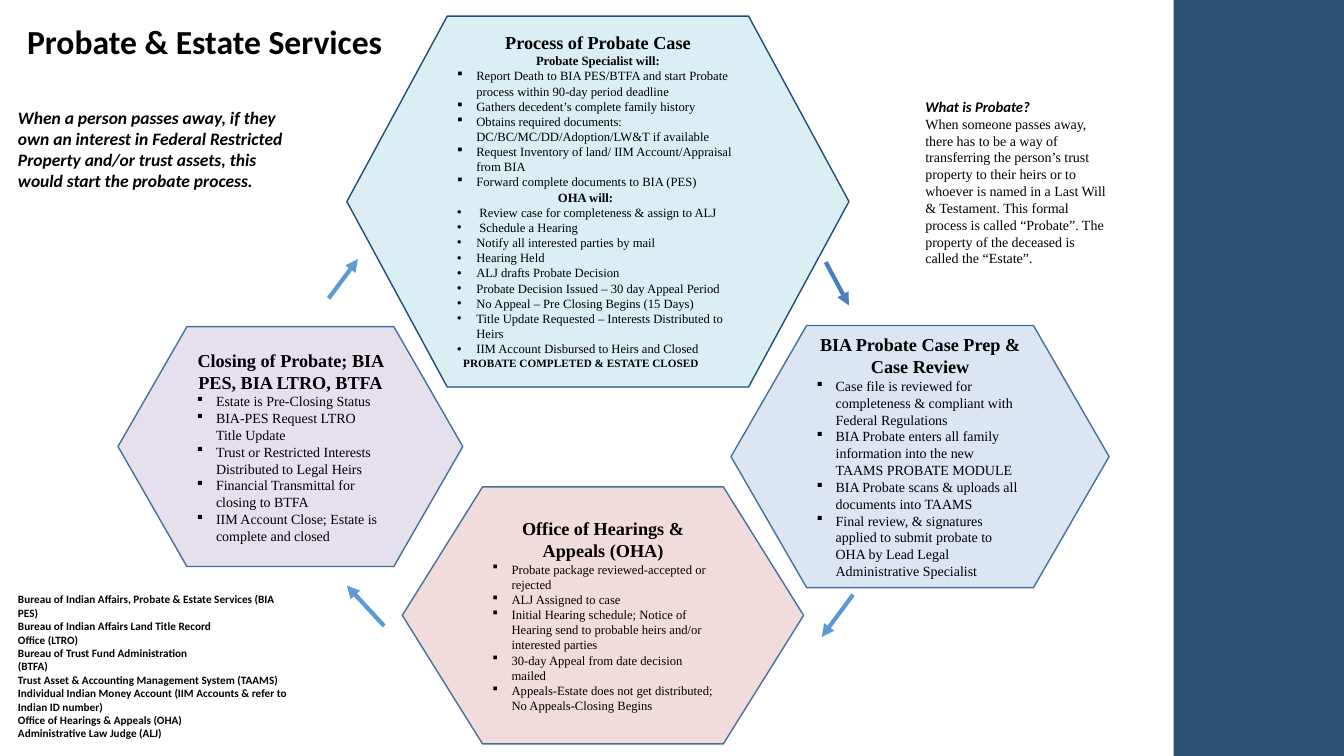
import pptx
import pptx.dml.color
import pptx.enum.shapes
import pptx.enum.text
import pptx.oxml.ns
import pptx.util
from lxml import etree

Inches, Pt = pptx.util.Inches, pptx.util.Pt
SHAPES = pptx.enum.shapes.MSO_SHAPE
ANCHOR = pptx.enum.text.MSO_ANCHOR
ALIGN = pptx.enum.text.PP_ALIGN
qn = pptx.oxml.ns.qn
rgb = pptx.dml.color.RGBColor.from_string
SERIF, SANS = "Times New Roman", "Calibri"
SQUARE, DOT = ("Wingdings", "§"), ("Arial", "•")

deck = pptx.Presentation()
deck.slide_width, deck.slide_height = Inches(13.33), Inches(7.5)
slide = deck.slides.add_slide(deck.slide_layouts[6])
shapes = slide.shapes


def write(frame, text, size, font=SERIF, bold=False, italic=False,
          align=ALIGN.LEFT, bullet=None, indent=0):
    """Append one paragraph, filling the empty first one if it is still free."""
    paragraph = frame.paragraphs[0]
    if paragraph.runs:
        paragraph = frame.add_paragraph()
    paragraph.alignment = align
    props = paragraph._p.get_or_add_pPr()
    if indent:
        props.set("marL", str(Inches(indent)))
    if bullet:
        bullet_font, mark = bullet
        props.set("indent", str(-Inches(indent)))
        etree.SubElement(props, qn("a:buFont")).set("typeface", bullet_font)
        etree.SubElement(props, qn("a:buChar")).set("char", mark)
    run = paragraph.add_run()
    run.text = text
    run.font.name, run.font.size = font, Pt(size)
    run.font.bold, run.font.italic = bold, italic
    run.font.color.rgb = rgb("000000")


# Side band
band = shapes.add_shape(SHAPES.RECTANGLE, Inches(11.64), 0, Inches(1.69), Inches(7.5))
band.shadow.inherit = False
band.fill.solid()
band.fill.fore_color.rgb = rgb("2C4F76")
band.line.fill.background()

# Title
title = shapes.add_textbox(Inches(0.17), Inches(0.16), Inches(3.76), Inches(0.5))
title.text_frame.word_wrap = False
write(title.text_frame, "Probate & Estate Services", 24, SANS, bold=True)

# Stages of the cycle: place, fill, outline, heading, bullet size, bullets
stages = [
    ((3.44, 0.16, 4.98, 3.68), "DBEEF4", "1F4D78", "Process of Probate Case", 9, []),
    ((7.25, 3.23, 3.75, 2.6), "DCE6F2", "41719C", "BIA Probate Case Prep & Case Review", 10, [
        "Case file is reviewed for completeness & compliant with Federal Regulations",
        "BIA Probate enters all family information into the new TAAMS PROBATE MODULE",
        "BIA Probate scans & uploads all documents into TAAMS",
        "Final review, & signatures applied to submit probate to OHA by Lead Legal "
        "Administrative Specialist"]),
    ((3.99, 4.83, 3.98, 2.55), "F2DCDB", "41719C", "Office of Hearings & Appeals (OHA)", 9, [
        "Probate package reviewed-accepted or rejected",
        "ALJ Assigned to case",
        "Initial Hearing schedule; Notice of Hearing send to probable heirs and/or "
        "interested parties",
        "30-day Appeal from date decision mailed",
        "Appeals-Estate does not get distributed; No Appeals-Closing Begins"]),
    ((1.17, 3.24, 3.42, 2.38), "E6E0EC", "41719C", "Closing of Probate; BIA PES, BIA LTRO, BTFA", 10, [
        "Estate is Pre-Closing Status",
        "BIA-PES Request LTRO Title Update",
        "Trust or Restricted Interests Distributed to Legal Heirs",
        "Financial Transmittal for closing to BTFA",
        "IIM Account Close; Estate is complete and closed"]),
]
stage_frames = []
for place, fill, outline, heading, size, bullets in stages:
    stage = shapes.add_shape(SHAPES.FLOWCHART_PREPARATION, *map(Inches, place))
    stage.shadow.inherit = False
    stage.fill.solid()
    stage.fill.fore_color.rgb = rgb(fill)
    stage.line.color.rgb = rgb(outline)
    stage.line.width = Pt(1)
    frame = stage.text_frame
    frame.word_wrap = True
    frame.vertical_anchor = ANCHOR.MIDDLE
    write(frame, heading, 13, bold=True, align=ALIGN.CENTER)
    for text in bullets:
        write(frame, text, size, bullet=SQUARE, indent=0.19)
    stage_frames.append(frame)

# Detailed steps of the first stage
process = stage_frames[0]
process.vertical_anchor = ANCHOR.TOP
process.margin_top = Inches(0.15)
write(process, "Probate Specialist will:", 9, bold=True, align=ALIGN.CENTER)
for text in [
        "Report Death to BIA PES/BTFA and start Probate process within 90-day period deadline",
        "Gathers decedent’s complete family history",
        "Obtains required documents: DC/BC/MC/DD/Adoption/LW&T if available",
        "Request Inventory of land/ IIM Account/Appraisal from BIA",
        "Forward complete documents to BIA (PES)"]:
    write(process, text, 9, bullet=SQUARE, indent=0.19)
write(process, "OHA will:", 9, bold=True, indent=1)
for text, indent in [
        ("Review case for completeness & assign to ALJ", 0.22),
        ("Schedule a Hearing", 0.22),
        ("Notify all interested parties by mail", 0.19),
        ("Hearing Held", 0.19),
        ("ALJ drafts Probate Decision", 0.19),
        ("Probate Decision Issued – 30 day Appeal Period", 0.19),
        ("No Appeal – Pre Closing Begins (15 Days)", 0.19),
        ("Title Update Requested – Interests Distributed to Heirs", 0.19),
        ("IIM Account Disbursed to Heirs and Closed", 0.19)]:
    write(process, text, 9, bullet=DOT, indent=indent)
write(process, "PROBATE COMPLETED & ESTATE CLOSED", 8, bold=True, indent=0.06)

# Arrows between the stages, clockwise
for x1, y1, x2, y2, color in [
        (8.19, 2.6, 8.42, 3.03, "4B7EBC"),
        (8.46, 5.9, 8.15, 6.32, "5B9BD5"),
        (3.81, 6.21, 3.44, 5.81, "5B9BD5"),
        (3.26, 2.96, 3.55, 2.57, "5B9BD5")]:
    arrow = shapes.add_connector(pptx.enum.shapes.MSO_CONNECTOR.STRAIGHT,
                                 Inches(x1), Inches(y1), Inches(x2), Inches(y2))
    arrow.line.color.rgb = rgb(color)
    arrow.line.width = Pt(3)
    etree.SubElement(arrow.line._get_or_add_ln(), qn("a:tailEnd")).set("type", "triangle")
    etree.SubElement(arrow._element.spPr, qn("a:effectLst"))

# Notes around the cycle
note_frames = []
for place in [(0.08, 5.83, 2.92, 1.58), (0.08, 1.01, 3.01, 1.15), (9.08, 0.92, 2, 1.78)]:
    note = shapes.add_textbox(*map(Inches, place))
    note.text_frame.word_wrap = True
    note_frames.append(note.text_frame)
abbreviations, opening, definition = note_frames

for text in [
        "Bureau of Indian Affairs, Probate & Estate Services (BIA PES)",
        "Bureau of Indian Affairs Land Title Record",
        "Office (LTRO)",
        "Bureau of Trust Fund Administration",
        "(BTFA)",
        "Trust Asset & Accounting Management System (TAAMS)",
        "Individual Indian Money Account (IIM Accounts & refer to Indian ID number)",
        "Office of Hearings & Appeals (OHA)",
        "Administrative Law Judge (ALJ)"]:
    write(abbreviations, text, 8, SANS, bold=True)

write(opening, "When a person passes away, if they own an interest in Federal Restricted "
      "Property and/or trust assets, this would start the probate process.",
      12.5, SANS, bold=True, italic=True)

write(definition, "What is Probate?", 10.5, SANS, bold=True, italic=True)
write(definition, "When someone passes away, there has to be a way of transferring the "
      "person’s trust property to their heirs or to whoever is named in a Last Will & "
      "Testament. This formal process is called “Probate”. The property of the deceased "
      "is called the “Estate”.", 10)

deck.save("out.pptx")
